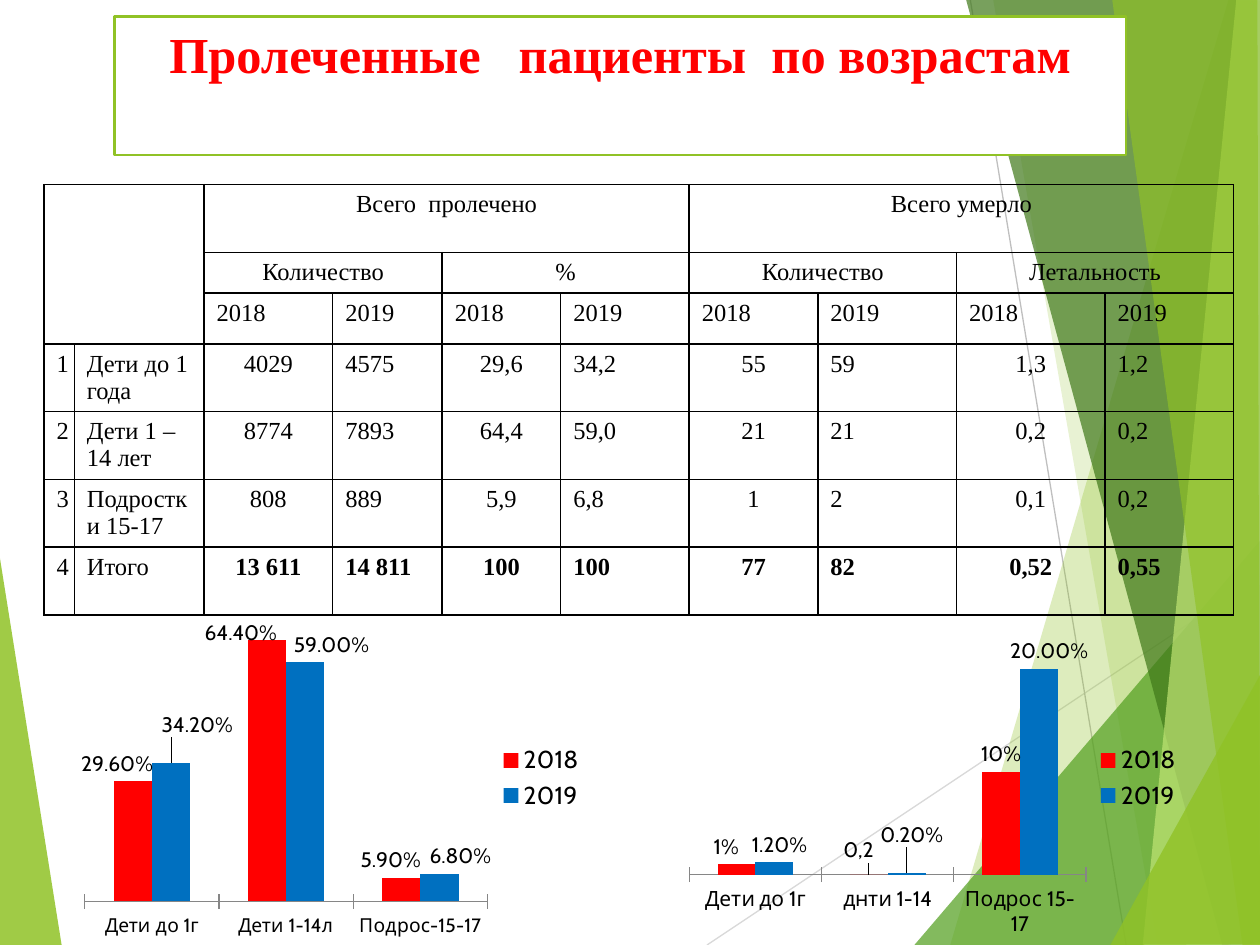
from lxml import etree
from pptx import Presentation
from pptx.chart.data import CategoryChartData
from pptx.dml.color import RGBColor
from pptx.enum.chart import (XL_CHART_TYPE, XL_LABEL_POSITION, XL_LEGEND_POSITION,
                             XL_TICK_LABEL_POSITION, XL_TICK_MARK)
from pptx.enum.shapes import MSO_CONNECTOR, MSO_SHAPE
from pptx.enum.text import MSO_ANCHOR, PP_ALIGN
from pptx.oxml.ns import qn
from pptx.util import Pt

COLUMN = XL_CHART_TYPE.COLUMN_CLUSTERED
OUTSIDE = XL_LABEL_POSITION.OUTSIDE_END
RIGHT = XL_LEGEND_POSITION.RIGHT
LOW, CROSS, NO_TICK = XL_TICK_LABEL_POSITION.LOW, XL_TICK_MARK.CROSS, XL_TICK_MARK.NONE
STRAIGHT, RECT = MSO_CONNECTOR.STRAIGHT, MSO_SHAPE.RECTANGLE
CENTER, LEFT, TOP = PP_ALIGN.CENTER, PP_ALIGN.LEFT, MSO_ANCHOR.TOP

THEME = dict(
    lime="90C226", green="54A021", dark="3F7819", pale="C0E474", white="FFFFFF",
    black="000000", red="FF0000", blue="0070C0", axis="868686",
    serif="Times New Roman", sans="Cabin",
    title=28.8, cell=14, legend=14, label=12,
)

TITLE = "Пролеченные   пациенты  по возрастам"
TITLE_BOX = (65.5, 9.4, 578, 79.2)

FACETS = [
    ("lime", 85, [(-0.5, 316), (35.3, 540.5), (-0.5, 540)]),
    ("lime", 30, [(702, 0), (543, 540), (721, 540.5), (720.5, 0.5)]),
    ("lime", 20, [(567.5, -0.5), (661.5, 540), (720.5, 540), (720.5, -0.5)]),
    ("green", 72, [(522.5, 540), (720, 309), (720.5, 540)]),
    ("dark", 70, [(552, -0.5), (698.5, 540), (720.5, 539.5), (720.5, -0.5)]),
    ("pale", 70, [(706.5, -0.5), (653, 540), (720.5, 540), (720, -0.5)]),
    ("lime", 65, [(635.5, -0.5), (710, 540), (720, 540), (718.5, -0.5)]),
    ("lime", 80, [(634.5, 540), (720.5, 385), (720.5, 539.5)]),
]
RAYS = [("D9D9D9", (404, 540, 720.5, 329)), ("BFBFBF", (554.5, 0, 643.5, 540))]

TABLE_AT = (25.2, 105.5)
COLS = [17, 74.2, 73.5, 62.6, 67.7, 73.5, 73.5, 79.2, 85, 73.5]
ROWS = [38.9, 23, 27.4] + [38.7] * 4
HEADS = [(0, 2, 4, "Всего  пролечено"), (0, 6, 4, "Всего умерло"),
         (1, 2, 2, "Количество"), (1, 4, 2, "%"),
         (1, 6, 2, "Количество"), (1, 8, 2, "Летальность")]
YEARS = ["2018", "2019"]
BODY = [
    ["1", "Дети до 1 года", "4029", "4575", "29,6", "34,2", "55", "59", "1,3", "1,2"],
    ["2", "Дети 1 – 14 лет", "8774", "7893", "64,4", "59,0", "21", "21", "0,2", "0,2"],
    ["3", "Подростки 15-17", "808", "889", "5,9", "6,8", "1", "2", "0,1", "0,2"],
    ["4", "Итого", "13 611", "14 811", "100", "100", "77", "82", "0,52", "0,55"],
]

CHARTS = [
    dict(at=(42.5, 349.2, 298.8, 190.8), plot=(0.02, 0.02, 0.77, 0.85), top=0.7, size=11,
         cats=["Дети до 1г", "Дети 1-14л", "Подрос-15-17"],
         series=[("red", "0.00%", [0.296, 0.644, 0.059], [(-0.03, 0), (-0.05, 0.03), (-0.02, 0)]),
                 ("blue", "0.00%", [0.342, 0.59, 0.068], [(0.05, -0.06), (0.05, 0), (0.04, 0)])],
         texts={}),
    dict(at=(388, 349.2, 294.5, 190.8), plot=(0.02, 0.02, 0.77, 0.77), top=0.25, size=12,
         cats=["Дети до 1г", "днти 1-14", "Подрос 15-17"],
         series=[("red", "0%", [0.01, 0, 0.1], [(-0.02, 0), (-0.02, -0.02), (0, 0)]),
                 ("blue", "0.00%", [0.012, 0.002, 0.2], [(0.01, 0), (0.01, -0.06), (0.02, 0)])],
         texts={(0, 1): "0,2"}),
]


def rgb(name):
    return RGBColor.from_string(THEME.get(name, name))


def pts(values):
    return [Pt(v) for v in values]


def style(font, face, size, color="black", bold=False):
    font.name, font.size, font.bold = THEME[face], Pt(size), bold
    font.color.rgb = rgb(color)


def layout(fields):
    root = etree.Element(qn("c:layout"))
    manual = etree.SubElement(root, qn("c:manualLayout"))
    for tag, val in fields:
        etree.SubElement(manual, qn("c:" + tag)).set("val", str(val))
    return root


def add_facet(shapes, color, alpha, points):
    start, *rest = [pts(point) for point in points]
    fb = shapes.build_freeform(*start)
    fb.add_line_segments(rest, close=True)
    sp = fb.convert_to_shape()
    sp.shadow.inherit = False
    sp.line.fill.background()
    sp.fill.solid()
    sp.fill.fore_color.rgb = rgb(color)
    clr = sp._element.spPr.find(".//" + qn("a:srgbClr"))
    etree.SubElement(clr, qn("a:alpha")).set("val", str(alpha * 1000))


def add_ray(shapes, color, ends):
    ray = shapes.add_connector(STRAIGHT, *pts(ends))
    ray.line.color.rgb = rgb(color)
    ray.line.width = Pt(0.75)
    etree.SubElement(ray._element.spPr, qn("a:effectLst"))


def add_title(shapes):
    sp = shapes.add_shape(RECT, *pts(TITLE_BOX))
    sp.shadow.inherit = False
    sp.fill.solid()
    sp.fill.fore_color.rgb = rgb("white")
    sp.line.color.rgb = rgb("lime")
    sp.line.width = Pt(1.5)
    tf = sp.text_frame
    tf.word_wrap, tf.vertical_anchor = True, TOP
    tf.text = TITLE
    p = tf.paragraphs[0]
    p.alignment = CENTER
    style(p.runs[0].font, "serif", THEME["title"], "red", True)


def set_borders(cell, hidden):
    tc_pr = cell._tc.get_or_add_tcPr()
    for side in "LRTB":
        ln = etree.SubElement(tc_pr, qn("a:ln" + side), w=str(Pt(1)))
        if side == hidden:
            etree.SubElement(ln, qn("a:noFill"))
        else:
            fill = etree.SubElement(ln, qn("a:solidFill"))
            etree.SubElement(fill, qn("a:srgbClr"), val=THEME["black"])


def fill_cell(cell, text, align, bold=False):
    cell.text = text
    p = cell.text_frame.paragraphs[0]
    p.alignment = align
    style(p.runs[0].font, "serif", THEME["cell"], bold=bold)


def add_ages_table(shapes):
    tbl = shapes.add_table(len(ROWS), len(COLS), *pts(TABLE_AT), Pt(sum(COLS)), Pt(sum(ROWS))).table
    tbl.first_row = tbl.horz_banding = False
    for col, width in zip(tbl.columns, COLS):
        col.width = Pt(width)
    for row, height in zip(tbl.rows, ROWS):
        row.height = Pt(height)
    for i in range(len(ROWS)):
        for j in range(len(COLS)):
            cell = tbl.cell(i, j)
            set_borders(cell, {0: "R", 1: "L"}.get(j) if i < 3 else None)
            cell.fill.background()
    for j in (0, 1):
        tbl.cell(0, j).merge(tbl.cell(2, j))
    for i, j, span, text in HEADS:
        tbl.cell(i, j).merge(tbl.cell(i, j + span - 1))
        fill_cell(tbl.cell(i, j), text, CENTER)
    for j in range(2, len(COLS)):
        fill_cell(tbl.cell(2, j), YEARS[j % 2], LEFT)
    for i, values in enumerate(BODY, 3):
        for j, text in enumerate(values):
            align = CENTER if j >= 2 and j % 2 == 0 else LEFT
            fill_cell(tbl.cell(i, j), text, align, j >= 2 and values is BODY[-1])


def add_label(point, shift, fmt, text):
    label = point.data_label
    if text:
        label.text_frame.text = text
        style(label.text_frame.paragraphs[0].runs[0].font, "sans", THEME["label"])
    else:
        style(label.font, "sans", THEME["label"])
    label.position = OUTSIDE
    return layout(zip("xy", shift)), None if text else fmt


def add_ages_chart(shapes, spec_):
    data = CategoryChartData()
    data.categories = spec_["cats"]
    for year, (_, fmt, values, _) in zip(YEARS, spec_["series"]):
        data.add_series(year, values, fmt)
    chart = shapes.add_chart(COLUMN, *pts(spec_["at"]), data).chart
    style(chart.font, "sans", 18)
    chart.has_title = False
    chart.has_legend = True
    chart.legend.position, chart.legend.include_in_layout = RIGHT, False
    style(chart.legend.font, "sans", THEME["legend"])
    cat, val = chart.category_axis, chart.value_axis
    cat.major_tick_mark, cat.minor_tick_mark, cat.tick_label_position = CROSS, NO_TICK, LOW
    cat.format.line.color.rgb = rgb("axis")
    style(cat.tick_labels.font, "sans", spec_["size"])
    val.visible = val.has_major_gridlines = False
    val.minimum_scale, val.maximum_scale = 0, spec_["top"]
    plot = chart.plots[0]
    plot.gap_width, plot.overlap, plot.vary_by_categories = 150, 0, False
    for n, (ser, (color, fmt, _, shifts)) in enumerate(zip(plot.series, spec_["series"])):
        ser.format.fill.solid()
        ser.format.fill.fore_color.rgb = rgb(color)
        labels = ser.data_labels
        labels.show_value, labels.position = True, OUTSIDE
        labels.number_format, labels.number_format_is_linked = fmt, False
        style(labels.font, "sans", THEME["label"])
        made = [add_label(ser.points[k], shift, fmt, spec_["texts"].get((n, k)))
                for k, shift in enumerate(shifts)]
        for node, (place, number) in zip(ser._element.iter(qn("c:dLbl")), made):
            node.insert(1, place)
            if number:
                node.insert(2, etree.Element(qn("c:numFmt"), formatCode=number, sourceLinked="0"))
    area = chart._chartSpace.find(".//" + qn("c:plotArea"))
    for old in area.findall(qn("c:layout")):
        area.remove(old)
    modes = [("layoutTarget", "inner"), ("xMode", "edge"), ("yMode", "edge")]
    area.insert(0, layout(modes + list(zip("xywh", spec_["plot"]))))


prs = Presentation()
prs.slide_width, prs.slide_height = Pt(720), Pt(540)
s = prs.slides.add_slide(prs.slide_layouts[6])
add_facet(s.shapes, *FACETS[0])
for ray in RAYS:
    add_ray(s.shapes, *ray)
for facet in FACETS[1:]:
    add_facet(s.shapes, *facet)
add_title(s.shapes)
for item in CHARTS:
    add_ages_chart(s.shapes, item)
add_ages_table(s.shapes)
prs.save("out.pptx")
